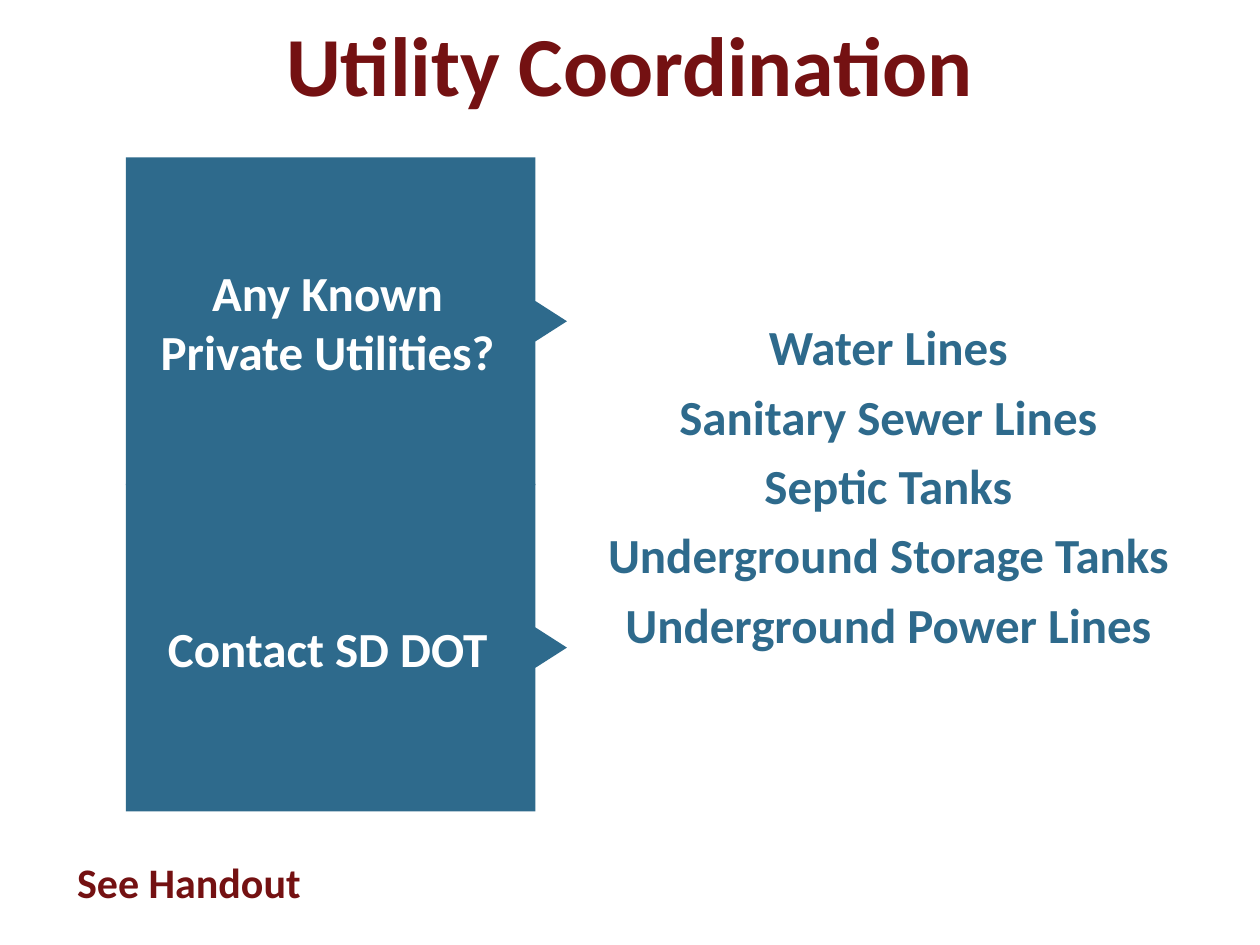
import pptx
import pptx.util
import pptx.dml.color
import pptx.enum.text

Inches = pptx.util.Inches
RED, BLUE, WHITE = "741112", "2E6A8C", "FFFFFF"
ITEMS = ["Water Lines", "Sanitary Sewer Lines", "Septic Tanks",
         "Underground Storage Tanks", "Underground Power Lines"]
STEPS = [("Any Known Private Utilities?", 1.25), ("Contact SD DOT", 3.84)]
LEFT, EDGE, TIP, HIGH = 1, 4.25, 4.5, 2.6


def color(code):
    return pptx.dml.color.RGBColor.from_string(code)


def place(shape, left, top, width, height):
    shape.left, shape.top = Inches(left), Inches(top)
    shape.width, shape.height = Inches(width), Inches(height)


def write(shape, lines, size=28, fill=BLUE, inset=0.1, after=0):
    """Fill a shape with centred bold lines, one paragraph each."""
    frame = shape.text_frame
    frame.word_wrap = True
    frame.auto_size = pptx.enum.text.MSO_AUTO_SIZE.NONE
    frame.vertical_anchor = pptx.enum.text.MSO_ANCHOR.MIDDLE
    frame.margin_left = frame.margin_right = Inches(inset)
    frame.margin_top = frame.margin_bottom = Inches(0.05)
    frame.text = "\n".join(lines)
    for para in frame.paragraphs:
        para.alignment = pptx.enum.text.PP_ALIGN.CENTER
        para.space_before = pptx.util.Pt(0)
        para.space_after = pptx.util.Pt(after)
        font = para.font
        font.name, font.size, font.bold = "Calibri", pptx.util.Pt(size), True
        font.color.rgb = color(fill)


def add_text(slide, box, lines, **style):
    shape = slide.shapes.add_textbox(*map(Inches, box))
    write(shape, lines, **style)


def add_step(slide, label, top):
    """Draw a block with a small pointer on its right side, and its label."""
    mid, base = top + HIGH / 2, top + HIGH
    points = [(EDGE, mid - 0.16), (EDGE, top), (LEFT, top),
              (LEFT, base), (EDGE, base), (EDGE, mid + 0.16)]
    maker = slide.shapes.build_freeform(Inches(TIP), Inches(mid))
    maker.add_line_segments([(Inches(x), Inches(y)) for x, y in points])
    block = maker.convert_to_shape()
    block.shadow.inherit = False
    block.fill.solid()
    block.fill.fore_color.rgb = color(BLUE)
    block.line.fill.background()
    add_text(slide, (LEFT, top + 0.73, 3.2, 1.14), [label], fill=WHITE)


def main():
    deck = pptx.Presentation()
    deck.slide_width, deck.slide_height = Inches(10), Inches(7.5)
    slide = deck.slides.add_slide(deck.slide_layouts[5])
    title = slide.shapes.title
    place(title, 0.5, 0, 9, 1)
    write(title, ["Utility Coordination"], size=48, fill=RED)
    add_text(slide, (4.5, 1.25, 5.1, 5.2), ITEMS, after=6)
    add_text(slide, (0.5, 6.75, 2, 0.5), ["See Handout"],
             size=24, fill=RED, inset=0.05)
    for label, top in STEPS:
        add_step(slide, label, top)
    deck.save("out.pptx")


if __name__ == "__main__":
    main()
